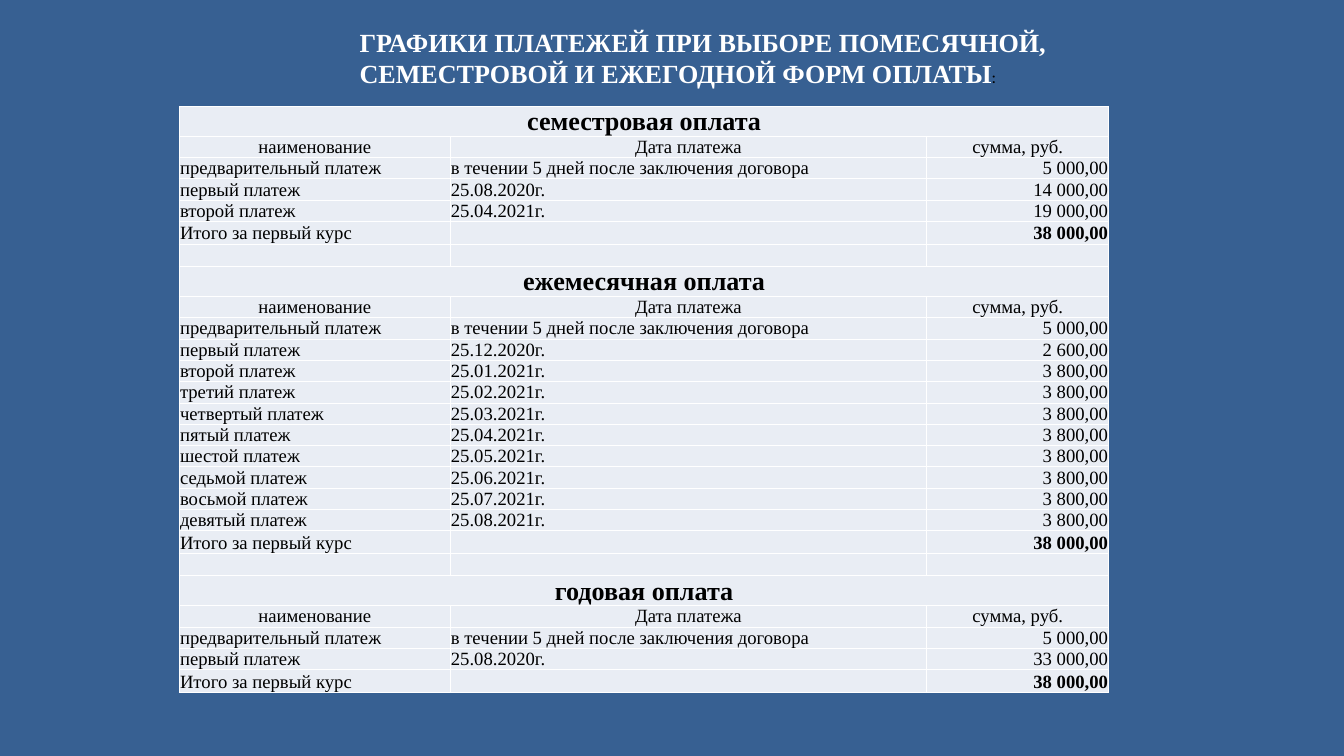
import dataclasses

import lxml.etree
import pptx
import pptx.dml.color
import pptx.enum.text
import pptx.oxml.ns
import pptx.text.text
import pptx.util

Pt = pptx.util.Pt
qn = pptx.oxml.ns.qn
ALIGN = pptx.enum.text.PP_ALIGN
ANCHOR = pptx.enum.text.MSO_ANCHOR


@dataclasses.dataclass(frozen=True)
class Theme:
    background: str = "376092"
    cell: str = "E9EDF4"
    border: str = "FFFFFF"
    light: str = "FFFFFF"
    dark: str = "000000"
    serif: str = "Times New Roman"
    sans: str = "Calibri"
    heading: int = 28
    body: int = 20
    mark: int = 18


COLUMNS = ("наименование", "Дата платежа", "сумма, руб.")
WIDTHS = (290.2, 510.5, 195.1)
ROW_HEIGHT = 22.87
HEADING_HEIGHT = 32.1
ORDINALS = ("первый", "второй", "третий", "четвертый", "пятый",
            "шестой", "седьмой", "восьмой", "девятый")
MONTHLY_DATES = ["25.12.2020"] + [f"25.{month:02}.2021" for month in range(1, 9)]
PLANS = (
    ("семестровая оплата", ("25.08.2020", "25.04.2021"), ("14 000,00", "19 000,00")),
    ("ежемесячная оплата", MONTHLY_DATES, ["2 600,00"] + ["3 800,00"] * 8),
    ("годовая оплата", ("25.08.2020",), ("33 000,00",)),
)


def plan_rows(name, dates, amounts):
    """Return (kind, texts) rows for one payment plan."""
    payments = [("payment", (f"{ordinal} платеж", f"{date}г.", amount))
                for ordinal, date, amount in zip(ORDINALS, dates, amounts)]
    return [
        ("heading", (name, "", "")),
        ("columns", COLUMNS),
        ("payment", ("предварительный платеж",
                     "в течении 5 дней после заключения договора", "5 000,00")),
        *payments,
        ("total", ("Итого за первый курс", "", "38 000,00")),
    ]


def schedule_rows():
    """Join the plans, with an empty row between neighbours."""
    rows = []
    for plan in PLANS:
        if rows:
            rows.append(("gap", ("", "", "")))
        rows.extend(plan_rows(*plan))
    return rows


class Deck:
    """Holds the theme and the current slide."""

    def __init__(self, prs, theme):
        self.theme = theme
        self.slide = prs.slides.add_slide(prs.slide_layouts[5])
        fill = self.slide.background.fill
        fill.solid()
        fill.fore_color.rgb = pptx.dml.color.RGBColor.from_string(theme.background)

    def format(self, obj, values):
        for name, value in values.items():
            setattr(obj, name, value)

    def style(self, font, size, color, bold=False, name=None):
        self.format(font, {"size": Pt(size), "bold": bold,
                           "name": name or self.theme.serif})
        font.color.rgb = pptx.dml.color.RGBColor.from_string(color)

    def title(self, text, mark, left, top, width, height):
        t = self.theme
        sp = self.slide.shapes.title
        self.format(sp, {"left": Pt(left), "top": Pt(top),
                         "width": Pt(width), "height": Pt(height)})
        tf = sp.text_frame
        self.format(tf, {"word_wrap": True, "vertical_anchor": ANCHOR.TOP,
                         "auto_size": pptx.enum.text.MSO_AUTO_SIZE.SHAPE_TO_FIT_TEXT})
        p = tf.paragraphs[0]
        p.alignment = ALIGN.LEFT
        for content, look in ((text, (t.heading, t.light, True)),
                              (mark, (t.mark, t.dark, False, t.sans))):
            r = p.add_run()
            r.text = content
            self.style(r.font, *look)

    def borders(self, cell):
        pr = cell._tc.get_or_add_tcPr()
        for i, side in enumerate(("lnL", "lnR", "lnT", "lnB")):
            ln = lxml.etree.Element(qn(f"a:{side}"), w=str(Pt(1)))
            solid = lxml.etree.SubElement(ln, qn("a:solidFill"))
            lxml.etree.SubElement(solid, qn("a:srgbClr"), val=self.theme.border)
            pr.insert(i, ln)

    def cell(self, cell, text, align, size, bold):
        self.format(cell, {"margin_left": Pt(0.7), "margin_right": Pt(0.7),
                           "margin_top": 0, "margin_bottom": 0,
                           "vertical_anchor": ANCHOR.BOTTOM})
        cell.fill.solid()
        cell.fill.fore_color.rgb = pptx.dml.color.RGBColor.from_string(self.theme.cell)
        self.borders(cell)
        p = cell.text_frame.paragraphs[0]
        # Exact line spacing lets the row height govern.
        self.format(p, {"alignment": align, "line_spacing": Pt(size)})
        if text:
            r = p.add_run()
            r.text = text
            font = r.font
        else:
            # The end mark sets the height of an empty cell.
            font = pptx.text.text.Font(p._p.get_or_add_endParaRPr())
        self.style(font, size, self.theme.dark, bold)

    def schedule(self, rows, left, top):
        frame = self.slide.shapes.add_table(
            len(rows), len(WIDTHS), Pt(left), Pt(top),
            Pt(sum(WIDTHS)), Pt(ROW_HEIGHT * len(rows)))
        table = frame.table
        for column, width in zip(table.columns, WIDTHS):
            column.width = Pt(width)
        for i, (kind, texts) in enumerate(rows):
            heading = kind == "heading"
            table.rows[i].height = Pt(HEADING_HEIGHT if heading else ROW_HEIGHT)
            if heading:
                table.cell(i, 0).merge(table.cell(i, len(WIDTHS) - 1))
            for j, text in enumerate(texts):
                if heading or kind == "columns":
                    align = ALIGN.CENTER
                else:
                    align = ALIGN.RIGHT if j == 2 else ALIGN.LEFT
                size = self.theme.heading if heading and j == 0 else self.theme.body
                bold = heading or (kind == "total" and j == 2)
                self.cell(table.cell(i, j), text, align, size, bold)


def main():
    prs = pptx.Presentation()
    prs.slide_width, prs.slide_height = Pt(1440), Pt(810)
    deck = Deck(prs, Theme())
    deck.schedule(schedule_rows(), 192.2, 113.8)
    deck.title("ГРАФИКИ ПЛАТЕЖЕЙ ПРИ ВЫБОРЕ ПОМЕСЯЧНОЙ, "
               "СЕМЕСТРОВОЙ И ЕЖЕГОДНОЙ ФОРМ ОПЛАТЫ", ":", 378, 24.5, 774, 75)
    prs.save("out.pptx")


if __name__ == "__main__":
    main()
